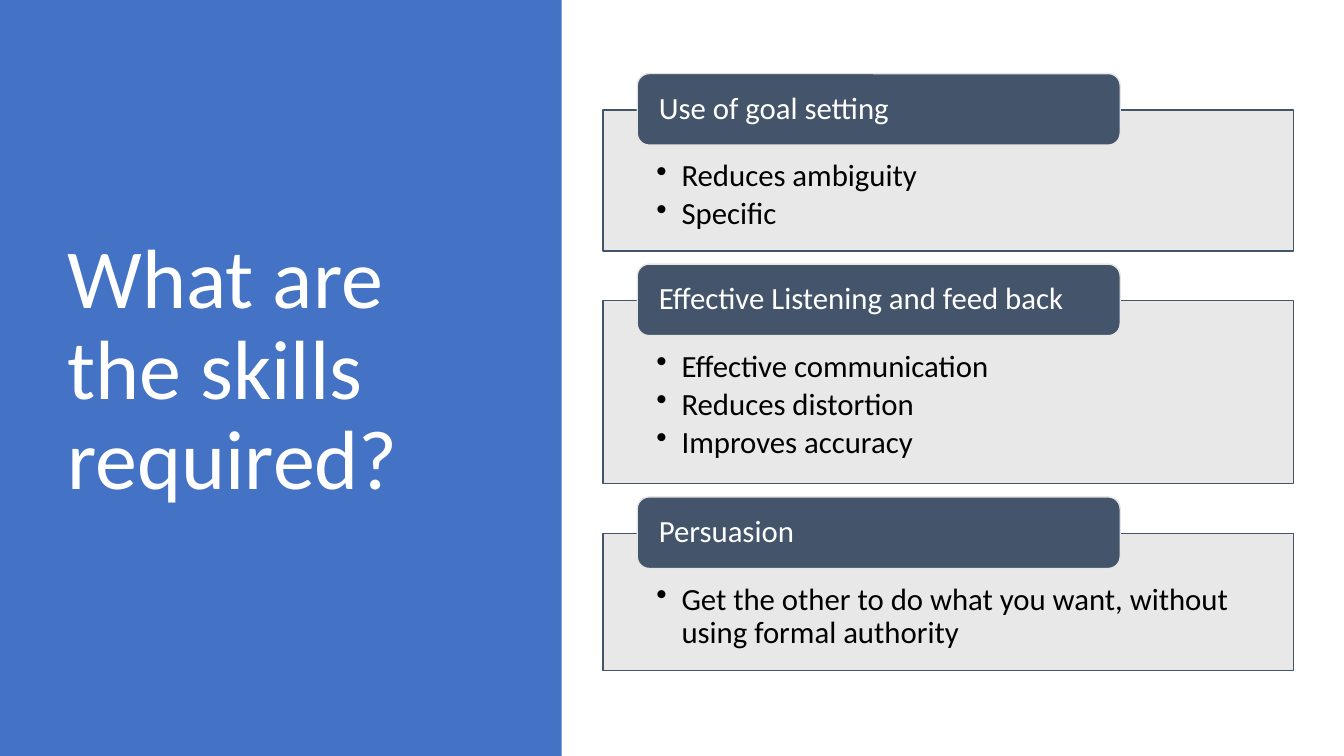
import pptx
import pptx.dml.color
import pptx.enum.shapes
import pptx.enum.text
import pptx.oxml
import pptx.oxml.ns
import pptx.util
from pptx.util import Inches

FONT = "Calibri"
BLUE, SLATE, GREY = "4472C4", "44546A", "E7E6E6"
WHITE, BLACK = "FFFFFF", "000000"

SKILLS = [
    ("Use of goal setting", 1.4, ["Reduces ambiguity", "Specific"]),
    ("Effective Listening and feed back", 1.82,
     ["Effective communication", "Reduces distortion", "Improves accuracy"]),
    ("Persuasion", 1.36,
     ["Get the other to do what you want, without using formal authority"]),
]
FIRST_TOP = 1.09
HEADING_HEIGHT = 0.71
HEADING_RISE = 0.36
GROUP_GAP = 0.13


def rgb(colour):
    return pptx.dml.color.RGBColor.from_string(colour)


def add_block(slide, kind, box, fill, line=None):
    block = slide.shapes.add_shape(kind, *map(Inches, box))
    block.shadow.inherit = False
    block.fill.solid()
    block.fill.fore_color.rgb = rgb(fill)
    if line:
        block.line.color.rgb = rgb(line)
        block.line.width = pptx.util.Pt(1)
    else:
        block.line.fill.background()
    return block


def set_margins(frame, left, top, right, bottom):
    frame.margin_left, frame.margin_top = Inches(left), Inches(top)
    frame.margin_right, frame.margin_bottom = Inches(right), Inches(bottom)


def write_lines(frame, lines, size, colour, anchor, space_after=0):
    frame.word_wrap = True
    frame.vertical_anchor = anchor
    frame.text = "\n".join(lines)
    for paragraph in frame.paragraphs:
        paragraph.alignment = pptx.enum.text.PP_ALIGN.LEFT
        paragraph.line_spacing = 0.9
        paragraph.space_after = pptx.util.Pt(space_after)
        paragraph.font.name = FONT
        paragraph.font.size = pptx.util.Pt(size)
        paragraph.font.color.rgb = rgb(colour)


def add_bullet(paragraph):
    properties = paragraph._p.get_or_add_pPr()
    properties.set("marL", str(Inches(0.25)))
    properties.set("indent", str(Inches(-0.25)))
    bullet = pptx.oxml.parse_xml(
        f'<a:buChar {pptx.oxml.ns.nsdecls("a")} char="•"/>')
    # The bullet must come before the default run properties.
    properties.find(pptx.oxml.ns.qn("a:defRPr")).addprevious(bullet)


def set_opacity(shape, percent):
    colour = shape._element.spPr.find(".//" + pptx.oxml.ns.qn("a:srgbClr"))
    colour.append(pptx.oxml.parse_xml(
        f'<a:alpha {pptx.oxml.ns.nsdecls("a")} val="{percent * 1000}"/>'))


def add_title(slide, text):
    """Fill the title placeholder and put the blue panel behind it."""
    panel = add_block(slide, pptx.enum.shapes.MSO_SHAPE.RECTANGLE,
                      (0, 0, 5.57, 7.5), BLUE)
    title = slide.shapes.title
    title._element.addprevious(panel._element)
    title.left, title.top = Inches(0.57), Inches(0.68)
    title.width, title.height = Inches(4.16), Inches(6.02)
    title.text_frame.auto_size = pptx.enum.text.MSO_AUTO_SIZE.NONE
    write_lines(title.text_frame, [text], 60, WHITE,
                pptx.enum.text.MSO_ANCHOR.MIDDLE)


def add_skill(slide, top, heading, height, points):
    details = add_block(slide, pptx.enum.shapes.MSO_SHAPE.RECTANGLE,
                        (5.98, top, 6.85, height), GREY, SLATE)
    set_opacity(details, 90)
    set_margins(details.text_frame, 0.53, 0.5, 0.53, 0.17)
    write_lines(details.text_frame, points, 22, BLACK,
                pptx.enum.text.MSO_ANCHOR.TOP, space_after=3.3)
    for paragraph in details.text_frame.paragraphs:
        add_bullet(paragraph)

    label = add_block(slide, pptx.enum.shapes.MSO_SHAPE.ROUNDED_RECTANGLE,
                      (6.32, top - HEADING_RISE, 4.79, HEADING_HEIGHT),
                      SLATE, GREY)
    # Rounded corners inset the text by a further 0.03 inch.
    set_margins(label.text_frame, 0.18, 0, 0.18, 0)
    write_lines(label.text_frame, [heading], 22, WHITE,
                pptx.enum.text.MSO_ANCHOR.MIDDLE)


def main():
    deck = pptx.Presentation()
    deck.slide_width, deck.slide_height = Inches(13.33), Inches(7.5)
    slide = deck.slides.add_slide(deck.slide_layouts.get_by_name("Title Only"))
    add_title(slide, "What are the skills required?")
    top = FIRST_TOP
    for heading, height, points in SKILLS:
        add_skill(slide, top, heading, height, points)
        top += height + GROUP_GAP + HEADING_RISE
    deck.save("out.pptx")


if __name__ == "__main__":
    main()
